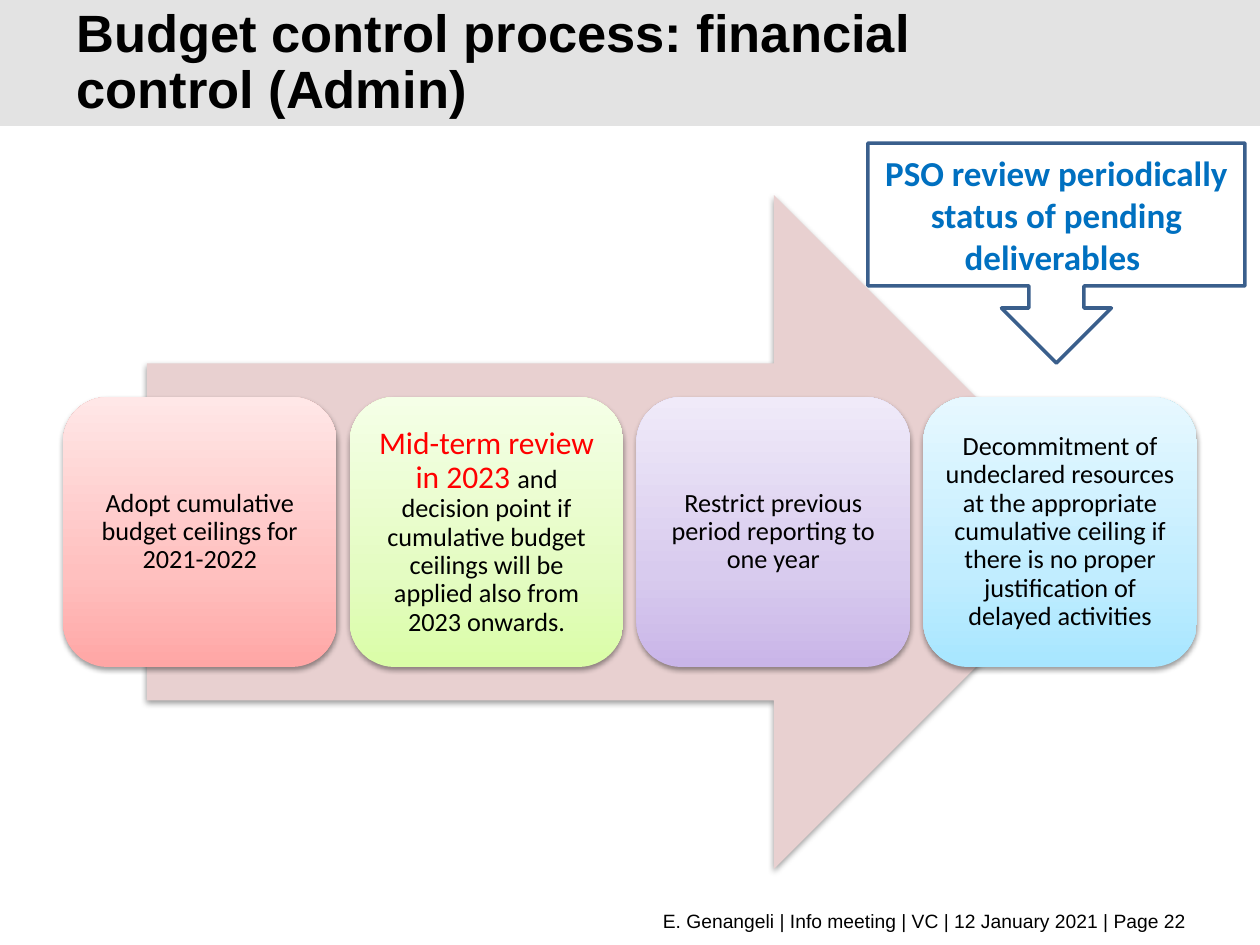
from copy import deepcopy
from dataclasses import dataclass

from lxml import etree
from pptx import Presentation
from pptx import util as u
from pptx.dml.color import RGBColor
from pptx.enum import shapes, text
from pptx.oxml import ns

PX = u.Inches(1) / 126


@dataclass(frozen=True)
class Theme:
    heading_font: str = "Arial"
    body_font: str = "Calibri"
    title_size: int = 30
    callout_size: int = 20
    accent_size: int = 18
    step_size: int = 15
    footer_size: int = 11
    ink: str = "000000"
    accent: str = "FF0000"
    band: str = "E3E3E3"
    arrow: str = "E8D0D0"
    callout_ink: str = "0070C0"
    callout_line: str = "3A5F8C"
    stops: tuple = (0, 0.35, 1)


THEME = Theme()
SHAPE = shapes.MSO_SHAPE
ALIGN = text.PP_ALIGN

STEPS = [
    (("FFA6A5", "FFC0BF", "FFE7E7"), "",
     "Adopt cumulative budget ceilings for 2021-2022"),
    (("DAFDA7", "E4FCC2", "F5FFE7"), "Mid-term review in 2023 ",
     "and decision point if cumulative budget ceilings will be applied "
     "also from 2023 onwards."),
    (("C9B5E8", "D8CBEE", "F0EAF9"), "",
     "Restrict previous period reporting to one year"),
    (("A7E6FF", "C1EDFF", "E7F8FF"), "",
     "Decommitment of undeclared resources at the appropriate cumulative "
     "ceiling if there is no proper justification of delayed activities"),
]


def emu(box):
    return [round(length * PX) for length in box]


def add_shape(page, kind, box, fill=None):
    shape = page.shapes.add_shape(kind, *emu(box))
    shape.shadow.inherit = False
    shape.line.fill.background()
    if fill:
        shape.fill.solid()
        shape.fill.fore_color.rgb = RGBColor.from_string(fill)
    else:
        shape.fill.background()
    return shape


def add_shadow(shape):
    effects = shape._element.spPr.find(ns.qn("a:effectLst"))
    shadow = etree.SubElement(
        effects, ns.qn("a:outerShdw"), blurRad=str(u.Pt(3.1)),
        dist=str(u.Pt(1.6)), dir="5400000", rotWithShape="0")
    color = etree.SubElement(shadow, ns.qn("a:srgbClr"), val=THEME.ink)
    etree.SubElement(color, ns.qn("a:alpha"), val="38000")


def fill_gradient(shape, colors):
    shape.fill.gradient()
    shape.fill.gradient_angle = 90
    stop_list = shape._element.spPr.find(ns.qn("a:gradFill")).find(ns.qn("a:gsLst"))
    stop_list.append(deepcopy(stop_list[0]))
    for stop, position, color in zip(shape.fill.gradient_stops, THEME.stops, colors):
        stop.position = position
        stop.color.rgb = RGBColor.from_string(color)


def style_font(font, face, size, color, bold=False):
    font.name = face
    font.size = u.Pt(size)
    font.color.rgb = RGBColor.from_string(color)
    font.bold = bold


def write(shape, spans, face, align, bold=False, spacing=None):
    frame = shape.text_frame
    frame.word_wrap = True
    frame.vertical_anchor = text.MSO_ANCHOR.MIDDLE
    para = frame.paragraphs[0]
    para.alignment = align
    para.line_spacing = spacing
    for words, size, color in spans:
        span = para.add_run()
        span.text = words
        style_font(span.font, face, size, color, bold)


def title_band(page, box):
    left, top, width, height = box
    add_shape(page, SHAPE.RECTANGLE, box, THEME.band)
    title = page.shapes.add_textbox(
        *emu((left + 64, top + 32, width - 220, height - 63)))
    write(title, [("Budget control process: financial control (Admin)",
                   THEME.title_size, THEME.ink)],
          THEME.heading_font, ALIGN.LEFT, bold=True, spacing=u.Pt(32))


def process(page, box):
    left, top, width, height = box
    arrow = add_shape(page, SHAPE.RIGHT_ARROW,
                      (left + 84, top, width - 170, height), THEME.arrow)
    add_shadow(arrow)
    gap, step_height = 13, 270
    step_width = (width - gap * (len(STEPS) - 1)) / len(STEPS)
    for index, (colors, accent, words) in enumerate(STEPS):
        step = add_shape(page, SHAPE.ROUNDED_RECTANGLE, (
            left + index * (step_width + gap),
            top + (height - step_height) / 2, step_width, step_height))
        fill_gradient(step, colors)
        add_shadow(step)
        frame = step.text_frame
        frame.margin_left = frame.margin_right = round(8 * PX)
        frame.margin_top = frame.margin_bottom = round(8 * PX)
        spans = [(accent, THEME.accent_size, THEME.accent)] if accent else []
        spans.append((words, THEME.step_size, THEME.ink))
        write(step, spans, THEME.body_font, ALIGN.CENTER, spacing=0.9)


def footer(page, box):
    note = page.shapes.add_textbox(*emu(box))
    write(note, [("E. Genangeli | Info meeting | VC | 12 January 2021 | Page 22",
                  THEME.footer_size, THEME.ink)],
          THEME.heading_font, ALIGN.RIGHT)


def review_callout(page, box):
    callout = add_shape(page, SHAPE.DOWN_ARROW_CALLOUT, box)
    callout.line.color.rgb = RGBColor.from_string(THEME.callout_line)
    callout.line.width = u.Pt(2)
    write(callout, [("PSO review periodically status of pending deliverables ",
                     THEME.callout_size, THEME.callout_ink)],
          THEME.body_font, ALIGN.CENTER, bold=True)


def main():
    deck = Presentation()
    deck.slide_width, deck.slide_height = emu((1260, 945))
    page = deck.slides.add_slide(deck.slide_layouts[6])
    title_band(page, (0, 0, 1260, 126))
    process(page, (63, 195, 1134, 674))
    footer(page, (64, 902, 1135, 37))
    review_callout(page, (868, 143, 377, 220))
    deck.save("out.pptx")


if __name__ == "__main__":
    main()
